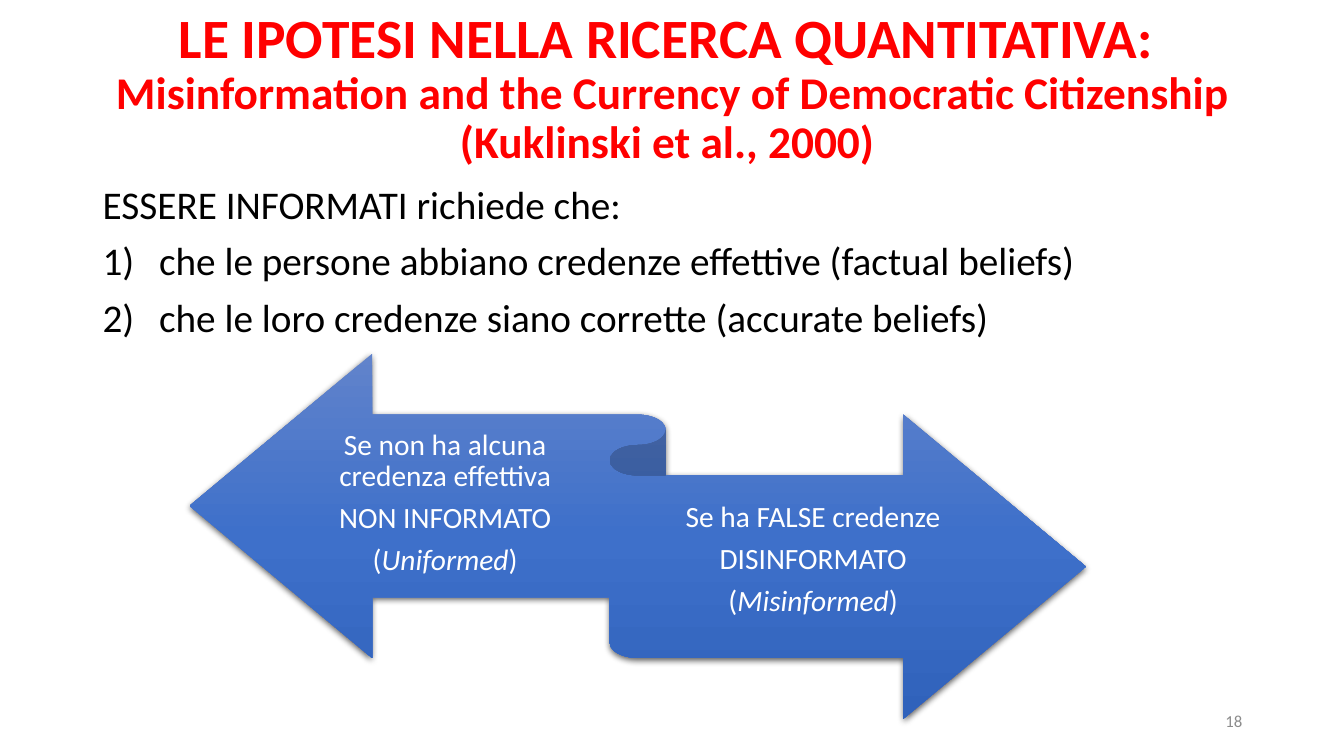
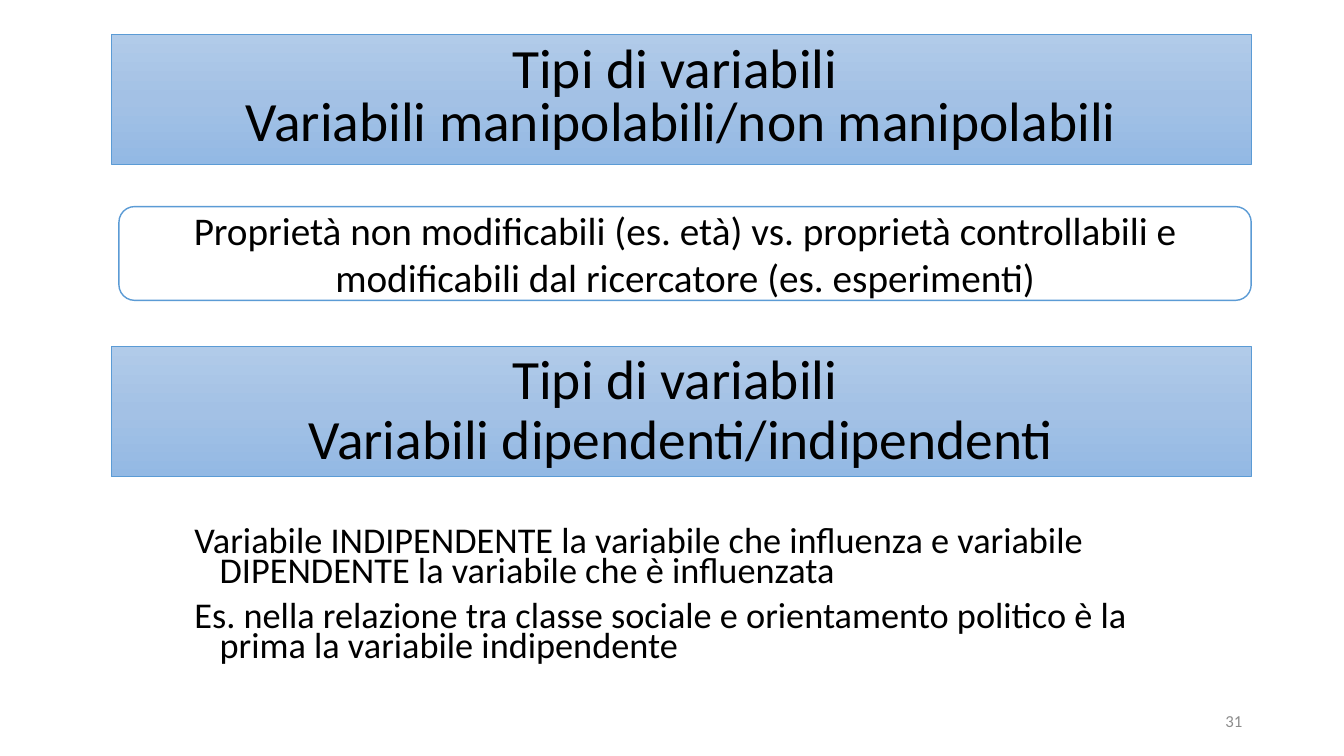
"""Two lecture slides on research hypotheses and types of variables."""
import copy
from dataclasses import dataclass
from typing import Optional

import pptx
import pptx.dml.color
import pptx.enum.shapes
import pptx.enum.text
import pptx.oxml
import pptx.oxml.ns
import pptx.util

Inches = pptx.util.Inches
Pt = pptx.util.Pt
RGBColor = pptx.dml.color.RGBColor
Shape = pptx.enum.shapes.MSO_SHAPE
Align = pptx.enum.text.PP_ALIGN
Anchor = pptx.enum.text.MSO_ANCHOR
qn = pptx.oxml.ns.qn

FONT = "Calibri"
RED = RGBColor(0xFF, 0x00, 0x00)
BLACK = RGBColor(0x00, 0x00, 0x00)
WHITE = RGBColor(0xFF, 0xFF, 0xFF)
GREY = RGBColor(0x8C, 0x8C, 0x8C)
OUTLINE = RGBColor(0x5B, 0x9B, 0xD5)
BAND_FILL = (RGBColor(0xB1, 0xCB, 0xE9), RGBColor(0xA3, 0xC1, 0xE5), RGBColor(0x93, 0xB9, 0xE4))
RIBBON_FILL = (RGBColor(0x61, 0x83, 0xCB), RGBColor(0x3E, 0x70, 0xCA), RGBColor(0x30, 0x62, 0xBB))
TITLE_SIZE = 39.6
SHADOW = (
    f'<a:effectLst {pptx.oxml.ns.nsdecls("a")}>'
    '<a:outerShdw blurRad="57150" dist="19050" dir="5400000" algn="ctr" rotWithShape="0">'
    '<a:srgbClr val="000000"><a:alpha val="63000"/></a:srgbClr>'
    "</a:outerShdw></a:effectLst>"
)


@dataclass(frozen=True)
class Box:
    left: float
    top: float
    width: float
    height: float

    def lengths(self) -> tuple:
        return tuple(Inches(n) for n in (self.left, self.top, self.width, self.height))


@dataclass(frozen=True)
class Style:
    size: float
    color: RGBColor = BLACK
    bold: bool = False
    align: Align = Align.LEFT
    spacing: float = 1.0
    before: float = 0
    after: float = 0


@dataclass(frozen=True)
class Span:
    text: str
    size: Optional[float] = None
    italic: Optional[bool] = None


@dataclass(frozen=True)
class Line:
    spans: tuple
    hanging: float = 0
    numbered: bool = False


TITLE = Style(TITLE_SIZE, RED, bold=True, align=Align.CENTER, spacing=0.9)
BODY = Style(28, spacing=0.9, before=10)
DEFINITION = Style(25.9, spacing=0.7, before=10)
PROPERTY = Style(28, align=Align.CENTER)
ARROW = Style(21, WHITE, align=Align.CENTER, spacing=0.9, after=7.35)
PAGE_NUMBER = Style(12, GREY, align=Align.RIGHT)


def line(text: str, hanging: float = 0, numbered: bool = False) -> Line:
    return Line((Span(text),), hanging, numbered)


def write(shape, lines: list, style: Style, anchor=Anchor.MIDDLE) -> None:
    frame = shape.text_frame
    frame.word_wrap = True
    frame.vertical_anchor = anchor
    for index, item in enumerate(lines):
        paragraph = frame.add_paragraph() if index else frame.paragraphs[0]
        paragraph.alignment = style.align
        paragraph.line_spacing = style.spacing
        paragraph.space_before = Pt(style.before)
        paragraph.space_after = Pt(style.after)
        font = paragraph.font
        font.name, font.size, font.bold = FONT, Pt(style.size), style.bold
        font.color.rgb = style.color
        if item.hanging:
            properties = paragraph._p.get_or_add_pPr()
            properties.set("marL", str(Inches(item.hanging)))
            properties.set("indent", str(-Inches(item.hanging)))
            if item.numbered:
                numbering = pptx.oxml.parse_xml(
                    f'<a:buAutoNum {pptx.oxml.ns.nsdecls("a")} type="arabicParenR"/>'
                )
                properties.find(qn("a:defRPr")).addprevious(numbering)
        for span in item.spans:
            for part_index, part in enumerate(span.text.split("\n")):
                if part_index:
                    paragraph.add_line_break()
                if part:
                    run = paragraph.add_run()
                    run.text = part
                    if span.size:
                        run.font.size = Pt(span.size)
                    if span.italic:
                        run.font.italic = True


def add_text(slide, box: Box, lines: list, style: Style, anchor=Anchor.TOP):
    label = slide.shapes.add_textbox(*box.lengths())
    write(label, lines, style, anchor)
    return label


def add_outlined(slide, kind: Shape, box: Box, line_width: float = 0):
    shape = slide.shapes.add_shape(kind, *box.lengths())
    shape.shadow.inherit = False
    if line_width:
        shape.line.color.rgb = OUTLINE
        shape.line.width = Pt(line_width)
    else:
        shape.line.fill.background()
    return shape


def fill_gradient(shape, colors: tuple) -> None:
    shape.fill.gradient()
    shape.fill.gradient_angle = 270
    stop_list = shape._element.spPr.find(qn("a:gradFill")).find(qn("a:gsLst"))
    stop_list.insert(1, copy.deepcopy(stop_list[0]))
    for index, (stop, color) in enumerate(zip(shape.fill.gradient_stops, colors)):
        stop.position = index / (len(colors) - 1)
        stop.color.rgb = color


def add_band(slide, top: float, text: str, spacing: float) -> None:
    band = add_outlined(slide, Shape.RECTANGLE, Box(1.1, top, 11.31, 1.29), 0.5)
    fill_gradient(band, BAND_FILL)
    write(band, [line(text)], Style(TITLE_SIZE, align=Align.CENTER, spacing=spacing))


def add_ribbon(slide, box: Box) -> None:
    ribbon = add_outlined(slide, Shape.LEFT_RIGHT_RIBBON, box)
    fill_gradient(ribbon, RIBBON_FILL)
    properties = ribbon._element.spPr
    properties.replace(properties.find(qn("a:effectLst")), pptx.oxml.parse_xml(SHADOW))


def add_arrow_text(slide, box: Box, condition: str, outcome: str, english: str) -> None:
    english_line = Line((Span("("), Span(english, italic=True), Span(")")))
    label = add_text(slide, box, [line(condition), line(outcome), english_line], ARROW, Anchor.MIDDLE)
    frame = label.text_frame
    frame.margin_left = frame.margin_right = Inches(0)
    frame.margin_top, frame.margin_bottom = Inches(0.08), Inches(0.09)


def add_slide(deck, number: int):
    slide = deck.slides.add_slide(deck.slide_layouts[6])
    add_text(slide, Box(9.42, 6.95, 3, 0.4), [line(str(number))], PAGE_NUMBER, Anchor.MIDDLE)
    return slide


def build_hypotheses(deck) -> None:
    slide = add_slide(deck, 18)
    title = Line((
        Span("LE IPOTESI NELLA RICERCA QUANTITATIVA: \n"),
        Span("Misinformation and the Currency of Democratic Citizenship (Kuklinski et al., 2000) ", size=32.4),
    ))
    add_text(slide, Box(0.92, 0.16, 11.5, 1.45), [title], TITLE, Anchor.MIDDLE)
    add_text(slide, Box(0.92, 1.79, 11.5, 1.72), [
        line("ESSERE INFORMATI richiede che:"),
        line("che le persone abbiano credenze effettive (factual beliefs)", 0.56, True),
        line("che le loro credenze siano corrette (accurate beliefs)", 0.56, True),
    ], BODY)
    add_ribbon(slide, Box(1.88, 3.51, 8.89, 3.62))
    add_arrow_text(slide, Box(2.95, 4.13, 2.93, 1.74),
                   "Se non ha alcuna credenza effettiva", "NON INFORMATO", "Uniformed")
    add_arrow_text(slide, Box(6.33, 4.69, 3.47, 1.74),
                   "Se ha FALSE credenze", "DISINFORMATO", "Misinformed")


def build_variables(deck) -> None:
    slide = add_slide(deck, 31)
    add_band(slide, 0.34, "Tipi di variabili \nVariabili manipolabili/non manipolabili", 0.8)
    properties = add_outlined(slide, Shape.ROUNDED_RECTANGLE, Box(1.18, 2.05, 11.23, 0.93), 1)
    properties.fill.solid()
    properties.fill.fore_color.rgb = WHITE
    write(properties, [line(
        "Proprietà non modificabili (es. età) vs. proprietà controllabili e "
        "modificabili dal ricercatore (es. esperimenti)"
    )], PROPERTY)
    add_band(slide, 3.44, "Tipi di variabili \nVariabili dipendenti/indipendenti", 0.9)
    add_text(slide, Box(1.83, 5.2, 10.12, 1.59), [
        line("Variabile INDIPENDENTE la variabile che influenza e variabile "
             "DIPENDENTE la variabile che è influenzata", 0.25),
        line("Es. nella relazione tra classe sociale e orientamento politico è la "
             "prima la variabile indipendente", 0.25),
    ], DEFINITION)


def main() -> None:
    deck = pptx.Presentation()
    deck.slide_width, deck.slide_height = Inches(13.33), Inches(7.5)
    build_hypotheses(deck)
    build_variables(deck)
    deck.save("out.pptx")


if __name__ == "__main__":
    main()
